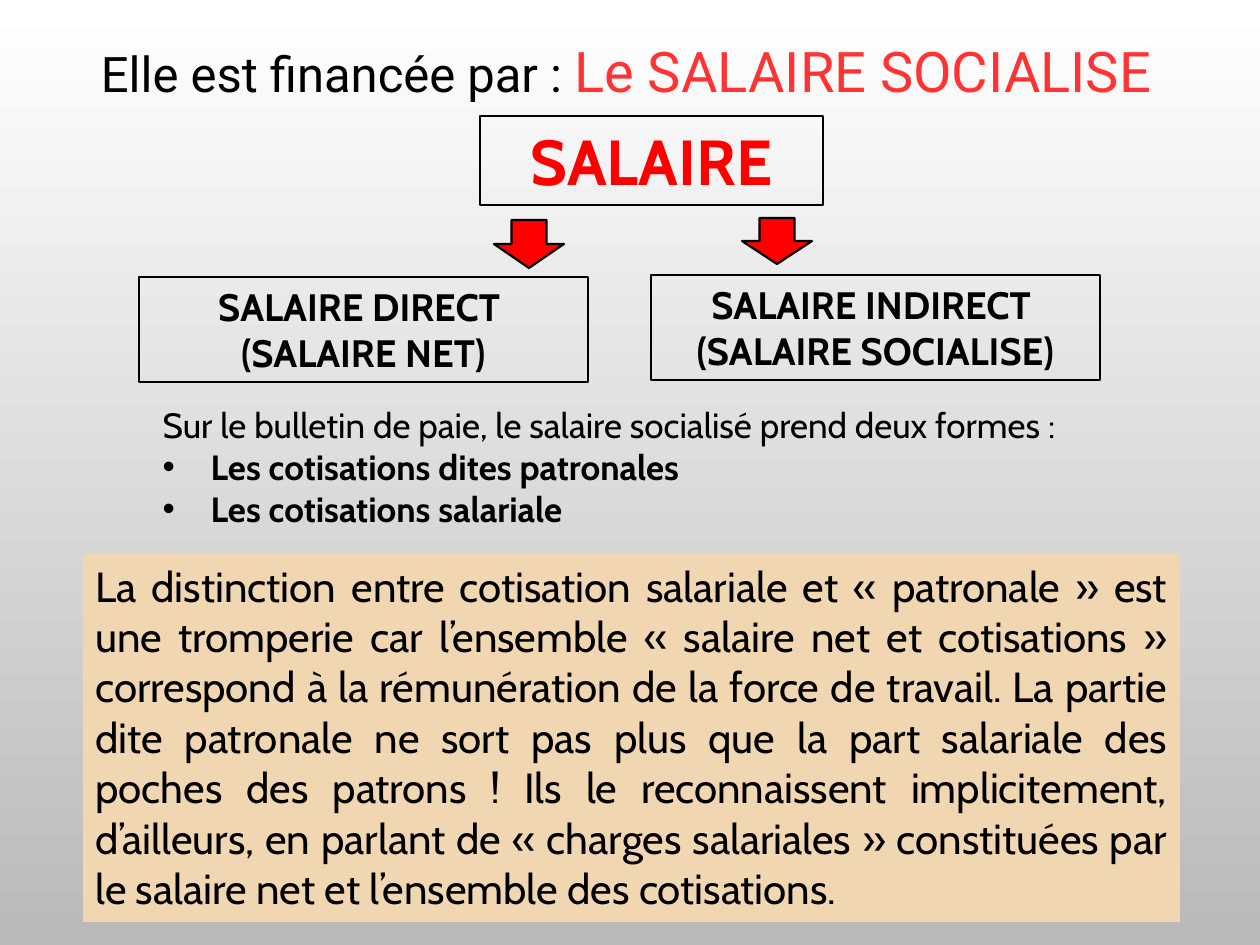
from lxml import etree
from pptx import Presentation
from pptx.dml.color import RGBColor
from pptx.enum.shapes import MSO_SHAPE
from pptx.enum.text import MSO_ANCHOR, MSO_AUTO_SIZE, PP_ALIGN
from pptx.oxml.ns import qn
from pptx.util import Pt

RECT, ARROW = MSO_SHAPE.RECTANGLE, MSO_SHAPE.DOWN_ARROW
TOP, MIDDLE = MSO_ANCHOR.TOP, MSO_ANCHOR.MIDDLE
LEFT, CENTER, JUSTIFY = PP_ALIGN.LEFT, PP_ALIGN.CENTER, PP_ALIGN.JUSTIFY
FIXED = MSO_AUTO_SIZE.NONE

SCALE = 914400 / 126
COLORS = {
    "black": "000000", "white": "FFFFFF", "gray": "B9B9B9",
    "red": "FF0000", "coral": "FF3333", "sand": "F0D7B2",
}
INDENT = 48


def px(n):
    return round(n * SCALE)


def color(name):
    return RGBColor.from_string(COLORS[name])


def mark(para, bullet):
    """Give a paragraph a hanging bullet, or none."""
    props = para._p.get_or_add_pPr()
    hang = px(INDENT) if bullet else 0
    props.set("marL", str(hang))
    props.set("indent", str(-hang))
    if bullet:
        etree.SubElement(props, qn("a:buChar")).set("char", "•")
    else:
        etree.SubElement(props, qn("a:buNone"))


def write(para, text, size=20, font="Cabin", tint="black", bold=False):
    run = para.add_run()
    run.text = text
    run.font.size = Pt(size)
    run.font.name = font
    run.font.bold = bold
    run.font.color.rgb = color(tint)


class Page:
    def __init__(self, deck):
        self.slide = deck.slides.add_slide(deck.slide_layouts[1])

    def back(self, first, last):
        fill = self.slide.background.fill
        fill.gradient()
        fill.gradient_angle = 270
        for stop, name in zip(fill.gradient_stops, (first, last)):
            stop.color.rgb = color(name)

    def place(self, shape, box):
        shape.left, shape.top, shape.width, shape.height = map(px, box)
        shape.text_frame.auto_size = FIXED
        shape.text_frame.word_wrap = True

    def title(self, box, parts):
        shape = self.slide.shapes.title
        self.place(shape, box)
        frame = shape.text_frame
        frame.margin_left = frame.margin_right = 0
        frame.margin_top = frame.margin_bottom = 0
        frame.vertical_anchor = MIDDLE
        para = frame.paragraphs[0]
        para.alignment = CENTER
        for text, size, tint in parts:
            write(para, text, size=size, font="Roboto", tint=tint)

    def body(self, box, intro, items):
        shape = self.slide.placeholders[1]
        self.place(shape, box)
        frame = shape.text_frame
        frame.vertical_anchor = TOP
        for i, text in enumerate([intro, *items]):
            para = frame.add_paragraph() if i else frame.paragraphs[0]
            para.alignment = LEFT
            para.space_before = Pt(0)
            mark(para, bullet=i > 0)
            write(para, text, bold=i > 0)

    def shape(self, kind, box, fill=None, line=0):
        item = self.slide.shapes.add_shape(kind, *map(px, box))
        item.shadow.inherit = False
        if fill:
            item.fill.solid()
            item.fill.fore_color.rgb = color(fill)
        else:
            item.fill.background()
        if line:
            item.line.color.rgb = color("black")
            item.line.width = Pt(line)
        else:
            item.line.fill.background()
        return item

    def panel(self, box, lines, fill=None, line=0, align=CENTER, **style):
        item = self.shape(RECT, box, fill, line)
        frame = item.text_frame
        frame.word_wrap = True
        frame.vertical_anchor = TOP
        for i, text in enumerate(lines):
            para = frame.add_paragraph() if i else frame.paragraphs[0]
            para.alignment = align
            write(para, text, **style)


def main():
    deck = Presentation()
    deck.slide_width, deck.slide_height = px(1260), px(945)
    page = Page(deck)
    page.back("white", "gray")
    page.title((11, 29, 1231, 83), [
        ("Elle est financée par : ", 28, "black"),
        ("Le SALAIRE SOCIALISE", 32, "coral"),
    ])
    page.body(
        (150, 397, 983, 140),
        "Sur le bulletin de paie, le salaire socialisé prend deux formes :",
        ["Les cotisations dites patronales", "Les cotisations salariale"],
    )
    page.panel((480, 116, 343, 89), ["SALAIRE"],
               line=0.75, size=36.3, tint="red", bold=True)
    for left, top, lines in (
        (139, 277, ["SALAIRE DIRECT ", "(SALAIRE NET)"]),
        (651, 275, ["SALAIRE INDIRECT ", "(SALAIRE SOCIALISE)"]),
    ):
        page.panel((left, top, 449, 105), lines,
                   line=0.75, size=21.8, bold=True)
    for box in ((742, 218, 70, 46), (494, 220, 70, 48)):
        page.shape(ARROW, box, fill="red", line=1.25)
    page.panel((83, 554, 1097, 368), [
        "La distinction entre cotisation salariale et « patronale » est une "
        "tromperie car l’ensemble « salaire net et cotisations » correspond "
        "à la rémunération de la force de travail. La partie dite patronale "
        "ne sort pas plus que la part salariale des poches des patrons ! "
        "Ils le reconnaissent implicitement, d’ailleurs, en parlant de "
        "« charges salariales » constituées par le salaire net et "
        "l’ensemble des cotisations.",
    ], fill="sand", align=JUSTIFY, size=24)
    deck.save("out.pptx")


if __name__ == "__main__":
    main()
